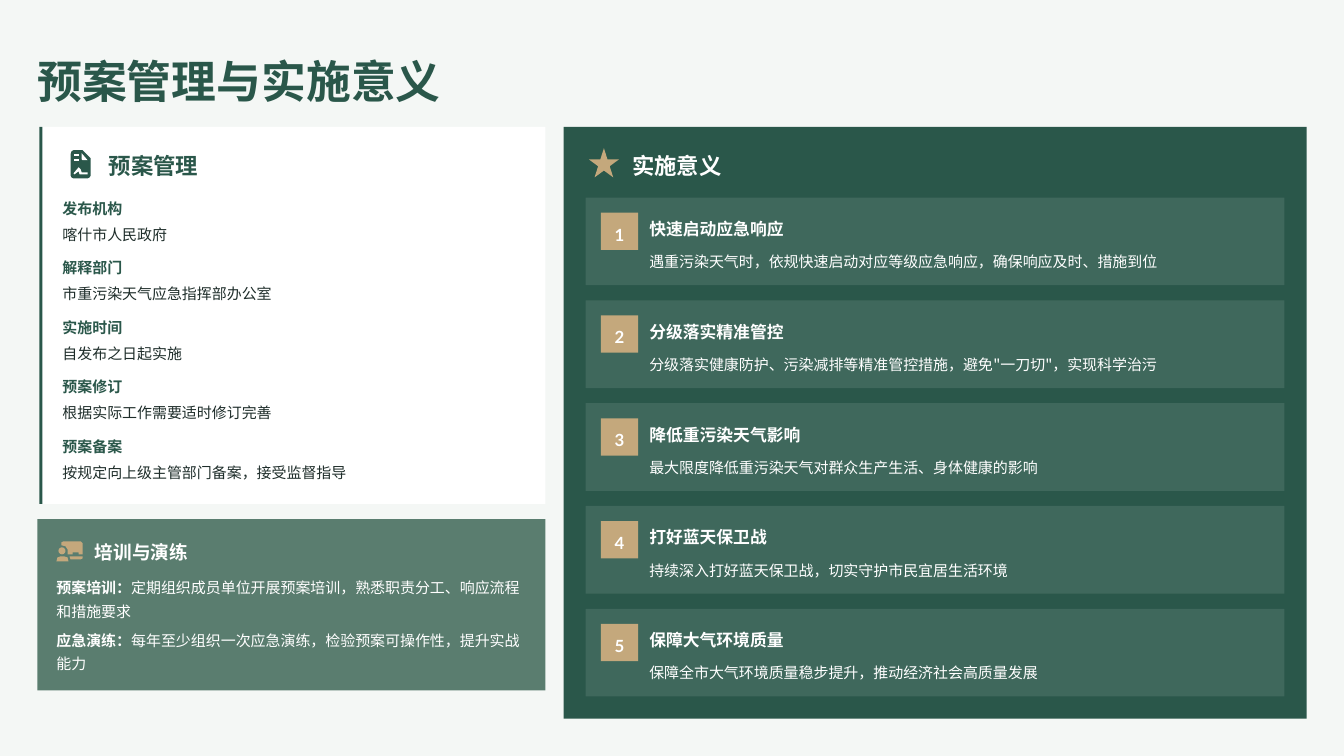
from pptx import Presentation
from pptx.dml.color import RGBColor
from pptx.enum.shapes import MSO_SHAPE
from pptx.enum.text import MSO_ANCHOR, MSO_AUTO_SIZE, PP_ALIGN
from pptx.oxml.ns import qn
from pptx.util import Inches, Pt
from lxml import etree

RECTANGLE = MSO_SHAPE.RECTANGLE
OVAL = MSO_SHAPE.OVAL
STAR = MSO_SHAPE.STAR_5_POINT
MIDDLE = MSO_ANCHOR.MIDDLE
NO_FIT = MSO_AUTO_SIZE.NONE
LEFT, CENTER = PP_ALIGN.LEFT, PP_ALIGN.CENTER

COLORS = {
    "page": "F4F7F5", "green": "2A574A", "sage": "5A7D6F",
    "gold": "C4A87C", "white": "FFFFFF", "ink": "1E2D2A",
}
CJK, LATIN = "Noto Sans CJK SC", "Lato"

FIELDS = [
    ("发布机构", "喀什市人民政府"),
    ("解释部门", "市重污染天气应急指挥部办公室"),
    ("实施时间", "自发布之日起实施"),
    ("预案修订", "根据实际工作需要适时修订完善"),
    ("预案备案", "按规定向上级主管部门备案，接受监督指导"),
]
TRAINING = [
    ("预案培训：", "定期组织成员单位开展预案培训，熟悉职责分工、响应流程和措施要求"),
    ("应急演练：", "每年至少组织一次应急演练，检验预案可操作性，提升实战能力"),
]
BENEFITS = [
    ("快速启动应急响应", "遇重污染天气时，依规快速启动对应等级应急响应，确保响应及时、措施到位"),
    ("分级落实精准管控", "分级落实健康防护、污染减排等精准管控措施，避免\"一刀切\"，实现科学治污"),
    ("降低重污染天气影响", "最大限度降低重污染天气对群众生产生活、身体健康的影响"),
    ("打好蓝天保卫战", "持续深入打好蓝天保卫战，切实守护市民宜居生活环境"),
    ("保障大气环境质量", "保障全市大气环境质量稳步提升，推动经济社会高质量发展"),
]

# Icon outlines, in inches on the page
DOCUMENT = [
    ("green", [(0.7, 1.53), (0.71, 1.5), (0.73, 1.49), (0.82, 1.49), (0.9, 1.57), (0.9, 1.74),
               (0.89, 1.76), (0.87, 1.77), (0.73, 1.77), (0.71, 1.76), (0.7, 1.74)]),
    ("white", [(0.81, 1.52), (0.81, 1.58), (0.82, 1.59), (0.87, 1.59)]),
    ("white", [(0.73, 1.53), (0.78, 1.53), (0.78, 1.55), (0.73, 1.55)]),
    ("white", [(0.73, 1.58), (0.78, 1.58), (0.78, 1.6), (0.73, 1.6)]),
    ("white", [(0.78, 1.66), (0.73, 1.72), (0.74, 1.73), (0.78, 1.7), (0.79, 1.73),
               (0.87, 1.73), (0.87, 1.71), (0.81, 1.71), (0.8, 1.68)]),
]
TEACHER = [
    ("gold", [(0.61, 5.41), (0.61, 5.38), (0.63, 5.37), (0.8, 5.37), (0.82, 5.39), (0.82, 5.5),
              (0.78, 5.5), (0.78, 5.48), (0.72, 5.48), (0.72, 5.5), (0.67, 5.5),
              (0.67, 5.45), (0.65, 5.42)]),
    ("gold", [(0.69, 5.52), (0.82, 5.52), (0.82, 5.54), (0.8, 5.55), (0.7, 5.55)]),
    ("gold", [(0.56, 5.57), (0.57, 5.53), (0.6, 5.52), (0.64, 5.52), (0.67, 5.53), (0.68, 5.57)]),
]


class SlideBuilder:
    """Holds the colours, the fonts and the current page."""

    def __init__(self, page):
        self.page = page
        page.background.fill.solid()
        page.background.fill.fore_color.rgb = self.color("page")

    def color(self, name):
        return RGBColor.from_string(COLORS[name])

    def paint(self, shape, color, alpha=None):
        shape.shadow.inherit = False
        shape.fill.solid()
        shape.fill.fore_color.rgb = self.color(color)
        shape.line.fill.background()
        if alpha is not None:
            tone = shape.element.find(".//" + qn("a:srgbClr"))
            etree.SubElement(tone, qn("a:alpha")).set("val", str(alpha * 1000))

    def shape(self, kind, bounds, color, alpha=None):
        shape = self.page.shapes.add_shape(kind, *map(Inches, bounds))
        self.paint(shape, color, alpha)

    def outline(self, color, points):
        corners = [(Inches(x), Inches(y)) for x, y in points]
        builder = self.page.shapes.build_freeform(*corners[0], scale=1.0)
        builder.add_line_segments(corners[1:], close=True)
        self.paint(builder.convert_to_shape(), color)

    def icon(self, parts):
        for color, points in parts:
            self.outline(color, points)

    def fill_text(self, box, spans, size, color, spacing, font=CJK, align=LEFT):
        frame = box.text_frame
        settings = {"margin_left": 0, "margin_right": 0, "margin_top": 0, "margin_bottom": 0,
                    "word_wrap": True, "auto_size": NO_FIT, "vertical_anchor": MIDDLE}
        for name, value in settings.items():
            setattr(frame, name, value)
        para = frame.paragraphs[0]
        para.alignment, para.line_spacing = align, spacing
        for text, bold in spans:
            span = para.add_run()
            span.text = text
            for name, value in {"name": font, "size": Pt(size), "bold": bold}.items():
                setattr(span.font, name, value)
            span.font.color.rgb = self.color(color)
            east_asian = etree.SubElement(span._r.get_or_add_rPr(), qn("a:ea"))
            east_asian.set("typeface", CJK)

    def title(self, text, bounds):
        box = self.page.shapes.title
        box.left, box.top, box.width, box.height = map(Inches, bounds)
        self.fill_text(box, [(text, True)], 32, "green", 0.8)

    def text(self, bounds, spans, size, color, spacing, **options):
        box = self.page.shapes.add_textbox(*map(Inches, bounds))
        self.fill_text(box, spans, size, color, spacing, **options)


def main():
    deck = Presentation()
    deck.slide_width, deck.slide_height = Inches(13.33), Inches(7.5)
    slide = SlideBuilder(deck.slides.add_slide(deck.slide_layouts[5]))
    slide.title("预案管理与实施意义", (0.37, 0.63, 12.81, 0.44))

    # Plan management panel
    slide.shape(RECTANGLE, (0.39, 1.26, 5.02, 3.74), "white")
    slide.shape(RECTANGLE, (0.39, 1.26, 0.03, 3.74), "green")
    slide.icon(DOCUMENT)
    slide.text((1.08, 1.48, 1.5, 0.3), [("预案管理", True)], 16, "green", 1.1)
    for index, (label, value) in enumerate(FIELDS):
        top = 1.93 + 0.59 * index
        slide.text((0.62, top, 4.64, 0.22), [(label, True)], 10.7, "green", 1.3)
        slide.text((0.62, top + 0.26, 4.64, 0.22), [(value, False)], 10.7, "ink", 1.3)

    # Training panel
    slide.shape(RECTANGLE, (0.37, 5.15, 5.04, 1.7), "sage")
    slide.icon(TEACHER)
    slide.shape(OVAL, (0.58, 5.43, 0.07, 0.07), "gold")
    slide.text((0.94, 5.33, 1.5, 0.26), [("培训与演练", True)], 13.3, "white", 1.2)
    for index, (label, detail) in enumerate(TRAINING):
        slide.text((0.56, 5.7 + 0.52 * index, 4.74, 0.44),
                   [(label, True), (detail, False)], 10.7, "white", 1.3)

    # Significance panel
    slide.shape(RECTANGLE, (5.59, 1.26, 7.37, 5.87), "green")
    slide.shape(STAR, (5.84, 1.47, 0.3, 0.29), "gold")
    slide.text((6.27, 1.48, 1.5, 0.3), [("实施意义", True)], 16, "white", 1.1)

    # Numbered benefit cards
    for index, (heading, detail) in enumerate(BENEFITS):
        top = 1.96 + 1.02 * index
        row = top + 0.15
        slide.shape(RECTANGLE, (5.81, top, 6.93, 0.87), "white", alpha=10)
        slide.shape(RECTANGLE, (5.96, row, 0.37, 0.37), "gold")
        slide.text((5.92, row, 0.45, 0.37), [(str(index + 1), True)], 12, "white", 1.3,
                   font=LATIN, align=CENTER)
        slide.text((6.44, row, 5.1, 0.26), [(heading, True)], 12, "white", 1.3, font=LATIN)
        slide.text((6.44, row + 0.33, 5.1, 0.24), [(detail, False)], 10.7, "white", 1.4)

    deck.save("out.pptx")


if __name__ == "__main__":
    main()
